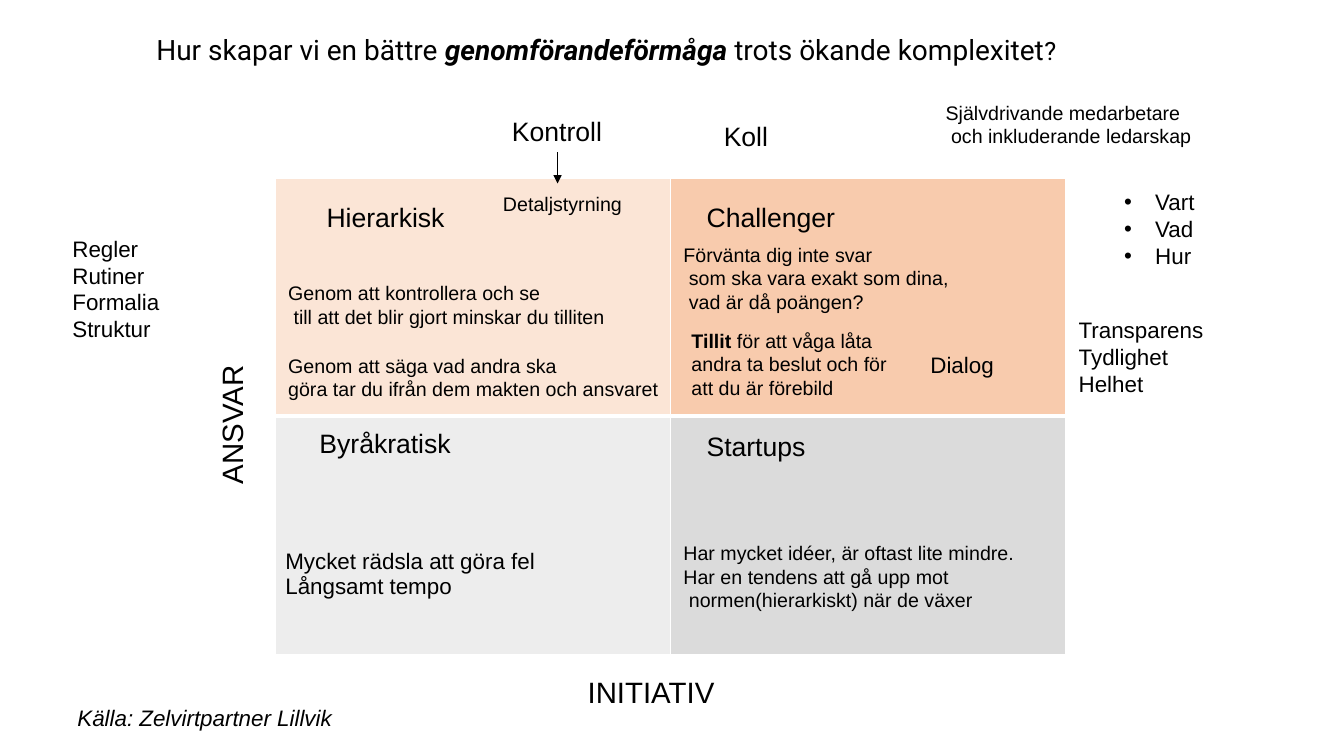
from dataclasses import dataclass

from lxml import etree
from pptx import Presentation, util as u
from pptx.dml.color import RGBColor
from pptx.enum import shapes, text
from pptx.oxml import ns


@dataclass(frozen=True)
class Theme:
    ink: str = "000000"
    border: str = "FFFFFF"
    quadrants: tuple = (("FBE5D6", "F8CBAD"), ("EDEDED", "DBDBDB"))
    font: str = "Arial"
    title_font: str = "Roboto"
    title: int = 20
    axis: int = 21
    heading: int = 19
    body: int = 16
    note: int = 14


@dataclass(frozen=True)
class Box:
    left: float
    top: float
    width: float
    height: float

    def inside(self, dx, dy, width, height):
        """Return a box offset from this box's top left corner."""
        return Box(self.left + dx, self.top + dy, width, height)

    def lengths(self):
        return [u.Inches(n) for n in (self.left, self.top, self.width, self.height)]


THEME = Theme()


def write(frame, content, size=THEME.note, font=THEME.font, italic=False, bullet=False, spacing=None):
    """Fill a frame: one paragraph per line, or one paragraph from (text, format) runs."""
    paragraphs = [[(line, {})] for line in content.split("\n")] if isinstance(content, str) else [content]
    for i, runs in enumerate(paragraphs):
        paragraph = frame.add_paragraph() if i else frame.paragraphs[0]
        paragraph.alignment = text.PP_ALIGN.LEFT
        if spacing:
            paragraph.line_spacing = spacing
        if bullet:
            props = paragraph._p.get_or_add_pPr()
            props.set("marL", str(u.Inches(0.31)))
            props.set("indent", str(u.Inches(-0.31)))
            etree.SubElement(props, ns.qn("a:buFont")).set("typeface", THEME.font)
            etree.SubElement(props, ns.qn("a:buChar")).set("char", "•")
        for words, form in runs:
            run = paragraph.add_run()
            run.text = words
            run.font.name = font
            run.font.size = u.Pt(form.get("size", size))
            run.font.bold = form.get("bold", False)
            run.font.italic = form.get("italic", italic)
            run.font.color.rgb = RGBColor.from_string(THEME.ink)


def label(slide, box, content, wrap=False, grow=True, **form):
    shape = slide.shapes.add_textbox(*box.lengths())
    frame = shape.text_frame
    frame.word_wrap = wrap
    frame.auto_size = text.MSO_AUTO_SIZE.SHAPE_TO_FIT_TEXT if grow else text.MSO_AUTO_SIZE.NONE
    write(frame, content, **form)
    return shape


def headline(slide, box):
    title = slide.shapes.title
    title.left, title.top, title.width, title.height = box.lengths()
    title.text_frame.vertical_anchor = text.MSO_ANCHOR.MIDDLE
    write(title.text_frame, [
        ("Hur skapar vi en bättre", {}),
        (" genomförandeförmåga ", {"bold": True, "italic": True}),
        ("trots ökande komplexitet", {}),
        ("?", {"size": 18}),
    ], size=THEME.title, font=THEME.title_font, spacing=0.9)


def style_cell(cell, color, widths):
    """Fill a cell and draw its borders; widths maps each side to points."""
    props = cell._tc.get_or_add_tcPr()
    for side, width in widths.items():
        line = etree.SubElement(props, ns.qn(f"a:ln{side}"), w=str(u.Pt(width)))
        fill = etree.SubElement(line, ns.qn("a:solidFill"))
        etree.SubElement(fill, ns.qn("a:srgbClr"), val=THEME.border)
    cell.fill.solid()
    cell.fill.fore_color.rgb = RGBColor.from_string(color)


def matrix(slide, box):
    """Draw the two by two table and return the box of each quadrant, row by row."""
    table = slide.shapes.add_table(2, 2, *box.lengths()).table
    table.first_row = table.horz_banding = False
    for r, colors in enumerate(THEME.quadrants):
        for c, color in enumerate(colors):
            style_cell(table.cell(r, c), color, {"L": 1, "R": 1, "T": 1 if r == 0 else 3, "B": 3 if r == 0 else 1})
    bureaucratic = table.cell(1, 0)
    bureaucratic.margin_top = u.Inches(1.32)
    write(bureaucratic.text_frame, "Mycket rädsla att göra fel\nLångsamt tempo", size=THEME.body)
    width, height = box.width / 2, box.height / 2
    return [box.inside(c * width, r * height, width, height) for r in range(2) for c in range(2)]


def axes(slide, box):
    label(slide, box.inside(3, 4.87, 2.37, 1), "INITIATIV", wrap=True, grow=False, size=THEME.axis)
    responsibility = label(slide, box.inside(-0.66, 2.13, 1, 1), "ANSVAR", grow=False, size=THEME.axis)
    responsibility.rotation = 270


def hierarchical(slide, box):
    label(slide, box.inside(0.41, 0.17, 1.39, 0.42), "Hierarkisk", size=THEME.heading)
    label(slide, box.inside(2.16, 0.09, 1.39, 0.34), "Detaljstyrning")
    label(slide, box.inside(0.03, 0.97, 3.36, 0.57),
          "Genom att kontrollera och se\n till att det blir gjort minskar du tilliten")
    label(slide, box.inside(0.03, 1.69, 3.89, 0.57),
          "Genom att säga vad andra ska\ngöra tar du ifrån dem makten och ansvaret")
    control = label(slide, box.inside(2.25, -0.68, 1.1, 0.42), "Kontroll", size=THEME.heading)
    middle = u.Inches(box.left + 2.8)
    arrow = slide.shapes.add_connector(
        shapes.MSO_CONNECTOR.STRAIGHT, middle, u.Inches(box.top - 0.26), middle, u.Inches(box.top + 0.05))
    arrow.begin_connect(control, 2)
    arrow.line.width = u.Pt(0.5)
    arrow.line.color.rgb = RGBColor.from_string(THEME.ink)
    etree.SubElement(arrow.line._get_or_add_ln(), ns.qn("a:tailEnd"), type="triangle")
    etree.SubElement(arrow._element.spPr, ns.qn("a:effectLst"))


def challenger(slide, box):
    label(slide, box.inside(0.43, -0.63, 0.65, 0.42), "Koll", size=THEME.heading)
    label(slide, box.inside(0.26, 0.17, 1.5, 0.42), "Challenger", size=THEME.heading)
    label(slide, box.inside(0.03, 0.59, 2.85, 0.81),
          "Förvänta dig inte svar\n som ska vara exakt som dina,\n vad är då poängen?")
    label(slide, box.inside(0.11, 1.44, 2.17, 0.81), [
        ("Tillit", {"bold": True}),
        (" för att våga låta andra ta beslut och för att du är förebild", {}),
    ], wrap=True)
    label(slide, box.inside(2.48, 1.66, 0.83, 0.37), "Dialog", size=THEME.body)


def bureaucratic_heading(slide, box):
    label(slide, box.inside(0.34, 0.06, 1.52, 0.42), "Byråkratisk", size=THEME.heading)


def startups(slide, box):
    label(slide, box.inside(0.26, 0.09, 1.2, 0.42), "Startups", size=THEME.heading)
    label(slide, box.inside(0.03, 1.19, 3.5, 0.81),
          "Har mycket idéer, är oftast lite mindre.\nHar en tendens att gå upp mot\n"
          " normen(hierarkiskt) när de växer")


def leadership_notes(slide, box):
    label(slide, box.inside(0, 0, 2.65, 0.57), "Självdrivande medarbetare\n och inkluderande ledarskap")
    label(slide, box.inside(1.77, 0.87, 1.37, 0.91), "Vart\nVad\nHur", wrap=True, size=THEME.body, bullet=True)
    label(slide, box.inside(1.32, 2.14, 1.45, 0.91), "Transparens\nTydlighet\nHelhet", size=THEME.body)


def main():
    deck = Presentation()
    deck.slide_width, deck.slide_height = u.Inches(13.33), u.Inches(7.5)
    slide = deck.slides.add_slide(deck.slide_layouts[5])
    headline(slide, Box(1.45, 0, 10.39, 1.02))
    grid = Box(2.73, 1.77, 7.84, 4.72)
    quadrants = matrix(slide, grid)
    axes(slide, grid)
    for fill_quadrant, box in zip((hierarchical, challenger, bureaucratic_heading, startups), quadrants):
        fill_quadrant(slide, box)
    label(slide, Box(0.62, 2.28, 1.07, 1.18), "Regler\nRutiner\nFormalia\nStruktur", size=THEME.body)
    leadership_notes(slide, Box(9.28, 0.95, 3.14, 3.05))
    label(slide, Box(0.67, 6.94, 3.34, 0.37), "Källa: Zelvirtpartner Lillvik", size=THEME.body, italic=True)
    deck.save("out.pptx")


if __name__ == "__main__":
    main()
